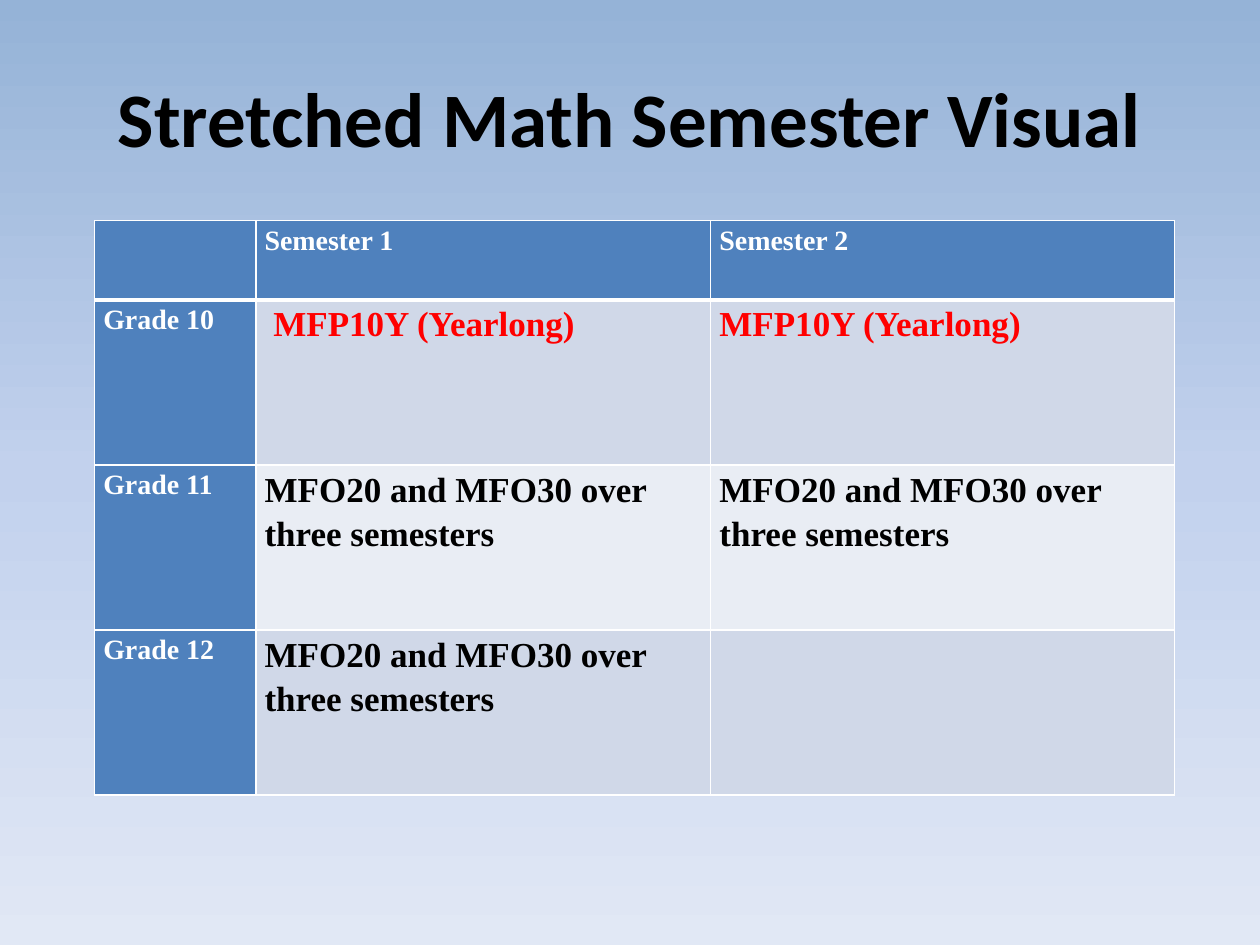
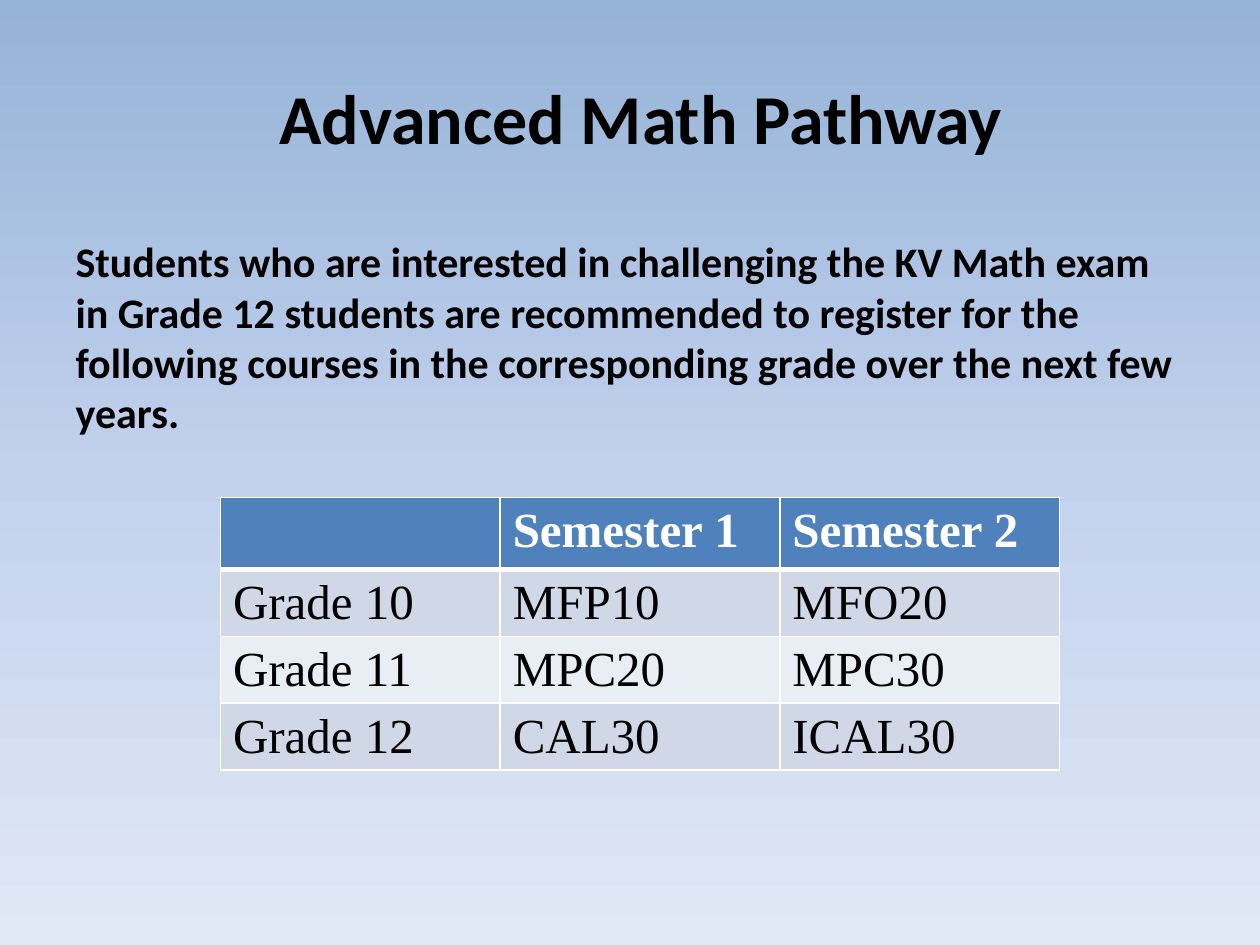
from copy import deepcopy

from lxml.etree import SubElement
from pptx import Presentation
from pptx.dml.color import RGBColor
from pptx.enum.text import MSO_ANCHOR, PP_ALIGN
from pptx.oxml import parse_xml
from pptx.oxml.ns import nsdecls, qn
from pptx.util import Inches, Pt

COLORS = {
    "sky_top": "95B3D7", "sky_middle": "C2D1ED", "sky_bottom": "E1E8F5",
    "header": "4F81BD", "odd_row": "D0D8E8", "even_row": "E9EDF4",
    "white": "FFFFFF", "black": "000000", "red": "FF0000",
}
HEADING_FONT, TABLE_FONT = "Calibri", "Times New Roman"
SEMESTERS = ["", "Semester 1", "Semester 2"]
THREE_SEMESTERS = "MFO20 and MFO30 over three semesters"

STRETCHED = {
    "title": "Stretched Math Semester Visual",
    "title_box": (0.5, 0.3, 9, 1.25),
    "title_size": 44,
    "rows": [
        SEMESTERS,
        ["Grade 10", " MFP10Y (Yearlong)", "MFP10Y (Yearlong)"],
        ["Grade 11", THREE_SEMESTERS, THREE_SEMESTERS],
        ["Grade 12", THREE_SEMESTERS, ""],
    ],
    "table_at": (0.75, 1.75),
    "widths": [1.28, 3.61, 3.68],
    "heights": [0.63, 1.31, 1.31, 1.31],
    "label_size": 16,
    "course_size": 20,
    "grade_headers": True,
    "bold_courses": True,
    "insets": (0.07, 0),
    "spacing": {"line_spacing": 1.15, "space_after": 10},
}
ADVANCED = {
    "title": "Advanced Math Pathway",
    "title_box": (0.25, 0.3, 9.67, 1.25),
    "title_size": 40,
    "advice": "Students who are interested in challenging the KV Math exam in Grade 12 "
              "students are recommended to register for the following courses in the "
              "corresponding grade over the next few years.",
    "advice_box": (0.5, 1.35, 9, 6.02),
    "rows": [
        SEMESTERS,
        ["Grade 10", "MFP10", "MFO20"],
        ["Grade 11", "MPC20", "MPC30"],
        ["Grade 12", "CAL30", "ICAL30"],
    ],
    "table_at": (1.75, 3.95),
    "widths": [2.22] * 3,
    "heights": [0.57, 0.53, 0.53, 0.53],
    "label_size": 28,
    "course_size": 28,
    "grade_headers": False,
    "bold_courses": False,
    "insets": (0.1, 0.05),
    "spacing": {},
}


def rgb(name):
    return RGBColor.from_string(COLORS[name])


def write(frame, text, *, size, font=HEADING_FONT, color="black", bold=True,
          align=PP_ALIGN.LEFT, line_spacing=None, space_before=0, space_after=0):
    paragraph = frame.paragraphs[0]
    paragraph.alignment = align
    paragraph.line_spacing = line_spacing
    paragraph.space_before, paragraph.space_after = Pt(space_before), Pt(space_after)
    run = paragraph.add_run()
    run.text = text
    run.font.size, run.font.name, run.font.bold = Pt(size), font, bold
    run.font.color.rgb = rgb(color)
    return paragraph


def place(placeholder, box):
    placeholder.left, placeholder.top, placeholder.width, placeholder.height = map(Inches, box)


def paint_background(master):
    fill = master.background.fill
    fill.gradient()
    fill.gradient_angle = 270
    first_stop = next(master.element.cSld.iter(qn("a:gs")))
    first_stop.addnext(deepcopy(first_stop))
    sky = ["sky_top", "sky_middle", "sky_bottom"]
    for index, (stop, name) in enumerate(zip(fill.gradient_stops, sky)):
        stop.position = index / 2
        stop.color.rgb = rgb(name)


def draw_borders(cell, row):
    weights = {"L": 1, "R": 1, "T": 3 if row == 1 else 1, "B": 3 if row == 0 else 1}
    properties = cell._tc.get_or_add_tcPr()
    for position, (side, weight) in enumerate(weights.items()):
        properties.insert(position, parse_xml(
            f'<a:ln{side} {nsdecls("a")} w="{Pt(weight)}"><a:solidFill>'
            f'<a:srgbClr val="{COLORS["white"]}"/></a:solidFill></a:ln{side}>'))


def add_title(slide, content):
    title = slide.shapes.title
    place(title, content["title_box"])
    title.text_frame.vertical_anchor = MSO_ANCHOR.MIDDLE
    write(title.text_frame, content["title"], size=content["title_size"], align=PP_ALIGN.CENTER)


def add_advice(slide, content):
    advice = slide.placeholders[1]
    place(advice, content["advice_box"])
    advice.text_frame.margin_top = Inches(0.52)
    paragraph = write(advice.text_frame, content["advice"], size=24)
    properties = paragraph._p.get_or_add_pPr()
    properties.set("marL", "0")
    properties.set("indent", "0")
    SubElement(properties, qn("a:buNone"))


def add_schedule(slide, content):
    rows, widths, heights = content["rows"], content["widths"], content["heights"]
    left, top = content["table_at"]
    schedule = slide.shapes.add_table(
        len(rows), len(widths), Inches(left), Inches(top),
        Inches(sum(widths)), Inches(sum(heights))).table
    for column, width in zip(schedule.columns, widths):
        column.width = Inches(width)
    for line, height in zip(schedule.rows, heights):
        line.height = Inches(height)
    side_inset, end_inset = map(Inches, content["insets"])
    for r, row in enumerate(rows):
        for c, text in enumerate(row):
            cell = schedule.cell(r, c)
            is_header = r == 0 or (c == 0 and content["grade_headers"])
            cell.margin_left = cell.margin_right = side_inset
            cell.margin_top = cell.margin_bottom = end_inset
            cell.fill.solid()
            cell.fill.fore_color.rgb = rgb(
                "header" if is_header else "odd_row" if r % 2 else "even_row")
            draw_borders(cell, r)
            if text:
                course_color = "red" if "Yearlong" in text else "black"
                write(cell.text_frame, text, font=TABLE_FONT,
                      size=content["label_size" if is_header else "course_size"],
                      color="white" if is_header else course_color,
                      bold=is_header or content["bold_courses"], **content["spacing"])


def main():
    prs = Presentation()
    prs.slide_width, prs.slide_height = Inches(10), Inches(7.5)
    paint_background(prs.slide_master)
    for content in (STRETCHED, ADVANCED):
        has_advice = "advice" in content
        slide = prs.slides.add_slide(prs.slide_layouts[1 if has_advice else 5])
        add_title(slide, content)
        if has_advice:
            add_advice(slide, content)
        add_schedule(slide, content)
    prs.save("out.pptx")


if __name__ == "__main__":
    main()
